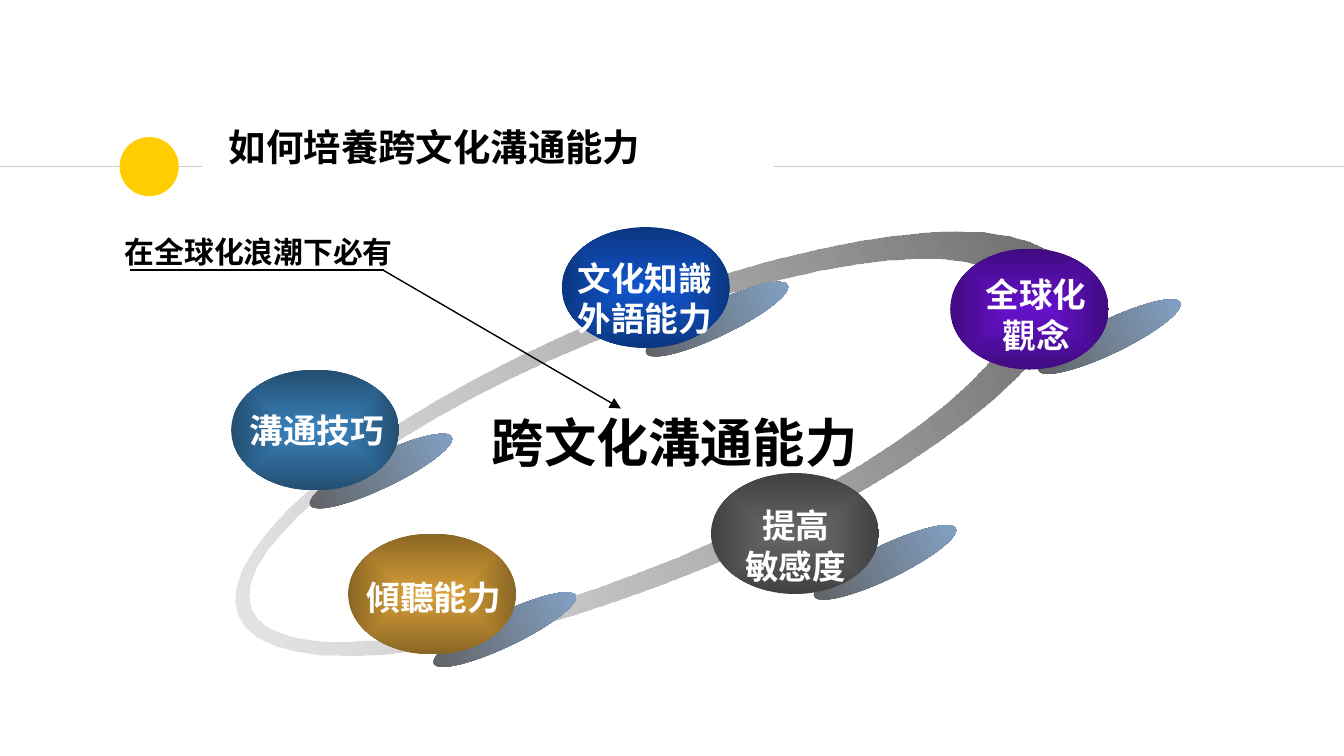
from math import cos, sin, pi

from lxml import etree
from pptx import Presentation
from pptx.dml.color import RGBColor
from pptx.enum.shapes import MSO_CONNECTOR, MSO_SHAPE
from pptx.enum.text import MSO_ANCHOR, MSO_AUTO_SIZE, PP_ALIGN
from pptx.oxml.ns import qn
from pptx.util import Inches, Pt

BLACK = RGBColor(0x00, 0x00, 0x00)
WHITE = RGBColor(0xFF, 0xFF, 0xFF)
YELLOW = RGBColor(0xFF, 0xCD, 0x00)
RULE_GREY = RGBColor(0xCC, 0xCC, 0xCC)
RING_LIGHT = RGBColor(0xBC, 0xBC, 0xBC)
RING_DARK = RGBColor(0x66, 0x66, 0x66)
SHADE_GREY = RGBColor(0x5F, 0x5F, 0x5F)
SHADE_BLUE = RGBColor(0x84, 0xA5, 0xCA)
BLUE = RGBColor(0x11, 0x55, 0xCC)
NAVY = RGBColor(0x0B, 0x36, 0x80)
TEAL = RGBColor(0x3A, 0x81, 0xBA)
DARK_TEAL = RGBColor(0x23, 0x4E, 0x70)
GOLD = RGBColor(0xD8, 0x9F, 0x39)
BROWN = RGBColor(0x8A, 0x66, 0x24)
CHARCOAL = RGBColor(0x41, 0x41, 0x41)
VIOLET = RGBColor(0x66, 0x11, 0xCC)
DARK_VIOLET = RGBColor(0x40, 0x0B, 0x80)


def paint_gradient(shape, start, end):
    shape.shadow.inherit = False
    shape.line.fill.background()
    shape.fill.gradient()
    shape.fill.gradient_angle = 0
    for stop, color, position in zip(shape.fill.gradient_stops, (start, end), (0, 1)):
        stop.color.rgb = color
        stop.position = position
    return shape._element.spPr.find(qn("a:gradFill"))


def write_text(frame, lines, size, font_name, color, align):
    for index, line in enumerate(lines):
        paragraph = frame.paragraphs[0] if index == 0 else frame.add_paragraph()
        paragraph.alignment = align
        run = paragraph.add_run()
        run.text = line
        run.font.size = Pt(size)
        run.font.name = font_name
        run.font.bold = True
        run.font.color.rgb = color


prs = Presentation()
prs.slide_width = Inches(10)
prs.slide_height = Inches(10 * 9 / 16)
slide = prs.slides.add_slide(prs.slide_layouts[5])
shapes = slide.shapes

title = shapes.title
title.left, title.top = Inches(1.54), Inches(0.62)
title.width, title.height = Inches(8.49), Inches(0.94)
heading = title.text_frame
heading.auto_size = MSO_AUTO_SIZE.NONE
heading.vertical_anchor = MSO_ANCHOR.MIDDLE
heading.margin_left = heading.margin_right = Inches(0.1)
heading.margin_top = heading.margin_bottom = Inches(0.1)
write_text(heading, [" 如何培養跨文化溝通能力"], 20, "Cambria", BLACK, PP_ALIGN.LEFT)

RING_X, RING_Y, RING_STEPS = 4.85, 3.3, 60
outlines = []
for center_x, center_y, radius_x, radius_y in [
    (RING_X, RING_Y, 3.33, 1),
    (RING_X - 0.15, RING_Y - 0.01, 3.07, 0.86),
]:
    angles = [2 * pi * step / RING_STEPS for step in range(RING_STEPS)]
    outlines.append([
        (Inches(center_x + radius_x * cos(a)), Inches(center_y + radius_y * sin(a)))
        for a in angles
    ])
outer, inner = outlines
inner.reverse()
builder = shapes.build_freeform(*outer[0], scale=1.0)
builder.add_line_segments(outer[1:], close=True)
builder.move_to(*inner[0])
builder.add_line_segments(inner[1:], close=True)
ring = builder.convert_to_shape()
ring.rotation = 337.4
ring_gradient = paint_gradient(ring, RING_LIGHT, RING_DARK)
light_color = ring_gradient.find(".//" + qn("a:srgbClr"))
etree.SubElement(light_color, qn("a:alpha"), val="36000")

for left, top in [(4.75, 2.25), (7.67, 2.38), (3.17, 4.56), (6, 4.06), (2.25, 3.38)]:
    shade = shapes.add_shape(
        MSO_SHAPE.OVAL, Inches(left), Inches(top), Inches(1.17), Inches(0.25))
    shade.rotation = 334.3
    paint_gradient(shade, SHADE_GREY, SHADE_BLUE)

for left, top, width, center_color, edge_color in [
    (4.18, 1.69, 1.25, BLUE, NAVY),
    (1.72, 2.75, 1.25, TEAL, DARK_TEAL),
    (2.59, 3.97, 1.25, GOLD, BROWN),
    (5.29, 3.52, 1.25, RING_DARK, CHARCOAL),
    (7.07, 1.85, 1.18, VIOLET, DARK_VIOLET),
]:
    ball = shapes.add_shape(
        MSO_SHAPE.OVAL, Inches(left), Inches(top), Inches(width), Inches(0.9))
    gradient = paint_gradient(ball, center_color, edge_color)
    gradient.remove(gradient.find(qn("a:lin")))
    glow = etree.SubElement(gradient, qn("a:path"), path="shape")
    etree.SubElement(glow, qn("a:fillToRect"), l="50000", t="50000", r="50000", b="50000")

SKILL = (18, "DejaVu Sans", WHITE)
for left, top, width, height, lines, style, align, wraps in [
    (1.76, 3, 1.21, 0.4, ["溝通技巧"], SKILL, PP_ALIGN.LEFT, False),
    (4.2, 1.87, 1.21, 0.71, ["文化知識", "外語能力"], SKILL, PP_ALIGN.LEFT, False),
    (7.23, 1.99, 0.96, 0.71, ["全球化", "觀念"], SKILL, PP_ALIGN.CENTER, False),
    (5.44, 3.71, 0.96, 0.71, ["提高", "敏感度"], SKILL, PP_ALIGN.CENTER, False),
    (2.63, 4.24, 1.21, 0.4, ["傾聽能力"], SKILL, PP_ALIGN.LEFT, False),
    (3.5, 3, 3.04, 0.57, ["跨文化溝通能力"], (28, "Arial", BLACK), PP_ALIGN.CENTER, True),
    (0.83, 1.69, 2.25, 0.37, ["在全球化浪潮下必有"], (16, "DejaVu Sans", BLACK),
     PP_ALIGN.LEFT, True),
]:
    label = shapes.add_textbox(Inches(left), Inches(top), Inches(width), Inches(height))
    label.text_frame.word_wrap = wraps
    label.text_frame.auto_size = MSO_AUTO_SIZE.SHAPE_TO_FIT_TEXT
    write_text(label.text_frame, lines, *style, align)

for x1, y1, x2, y2, color, has_arrow in [
    (0, 1.24, 1.5, 1.24, RULE_GREY, False),
    (5.76, 1.24, 10, 1.24, RULE_GREY, False),
    (2.86, 2.01, 0.97, 2.01, BLACK, False),
    (2.85, 2.01, 4.62, 3.04, BLACK, True),
]:
    connector = shapes.add_connector(
        MSO_CONNECTOR.STRAIGHT, Inches(x1), Inches(y1), Inches(x2), Inches(y2))
    connector.line.color.rgb = color
    connector.line.width = Pt(0.75)
    if has_arrow:
        etree.SubElement(connector.line._get_or_add_ln(), qn("a:tailEnd"), type="triangle")
    etree.SubElement(connector._element.spPr, qn("a:effectLst"))

title_dot = shapes.add_shape(
    MSO_SHAPE.OVAL, Inches(0.89), Inches(1.02), Inches(0.44), Inches(0.44))
title_dot.shadow.inherit = False
title_dot.fill.solid()
title_dot.fill.fore_color.rgb = YELLOW
title_dot.line.fill.background()

prs.save("out.pptx")
